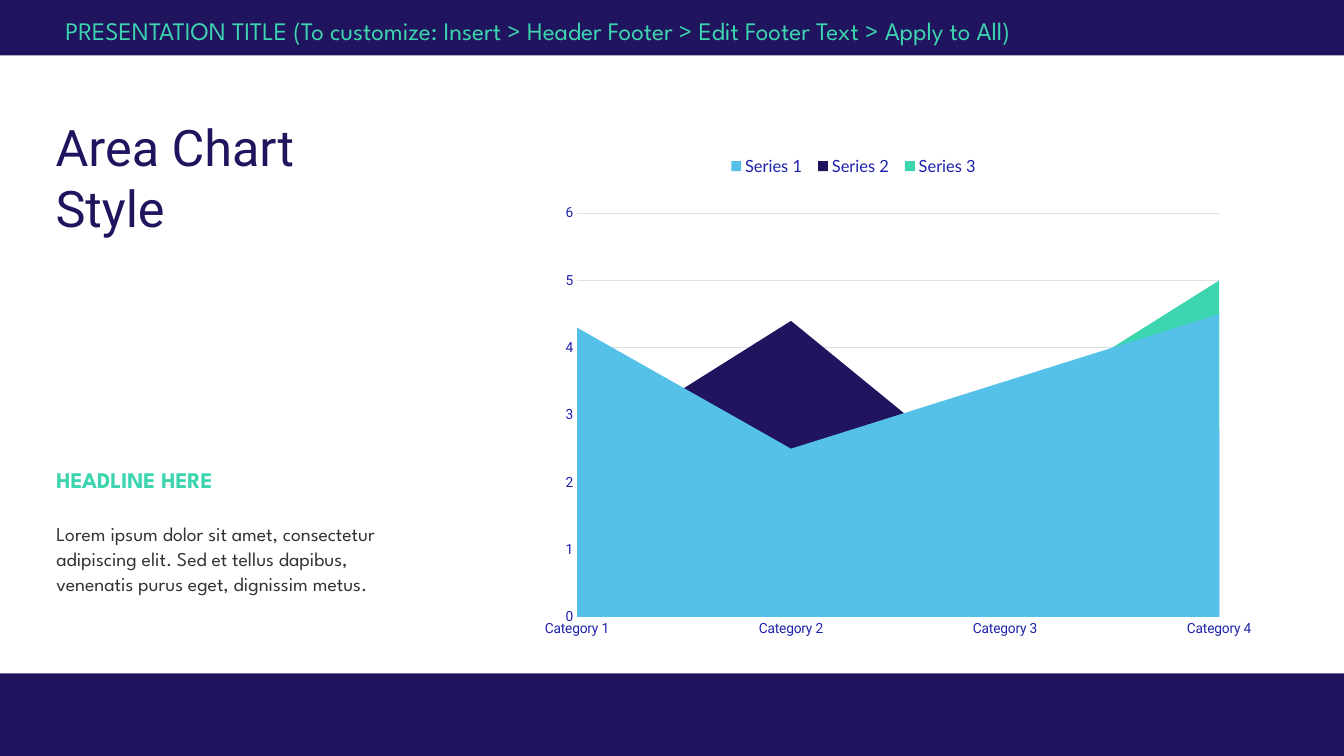
import pptx
import pptx.chart.data
import pptx.dml.color
import pptx.enum.chart
import pptx.enum.shapes
import pptx.enum.text
import pptx.oxml
import pptx.oxml.ns
import pptx.util

Cm, Pt = pptx.util.Cm, pptx.util.Pt
RGBColor = pptx.dml.color.RGBColor
ALIGN = pptx.enum.text.PP_ALIGN
ANCHOR = pptx.enum.text.MSO_ANCHOR

# Content
TITLE = "Area Chart\vStyle"
HEADER = ("PRESENTATION TITLE (To customize: Insert > Header Footer > "
          "Edit Footer Text > Apply to All)")
HEADLINE = "HEADLINE HERE"
BODY = ("Lorem ipsum dolor sit amet, consectetur adipiscing elit. "
        "Sed et tellus dapibus, venenatis purus eget, dignissim metus.")
CATEGORIES = ["Category 1", "Category 2", "Category 3", "Category 4"]

NAVY = RGBColor(0x21, 0x14, 0x5F)
INK = RGBColor(0x20, 0x14, 0x5E)
BLUE = RGBColor(0x1E, 0x22, 0xAA)
SKY = RGBColor(0x55, 0xC1, 0xE9)
MINT = RGBColor(0x3C, 0xD5, 0xAF)
GREY = RGBColor(0x33, 0x33, 0x33)
RULE = RGBColor(0xE0, 0xE0, 0xE0)

SERIES = [
    ("Series 1", (4.3, 2.5, 3.5, 4.5), SKY),
    ("Series 2", (2.4, 4.4, 1.8, 2.8), INK),
    ("Series 3", (2, 2, 3, 5), MINT),
]

# Geometry in cm; chart layouts are fractions of the chart: x, y, w, h
WIDTH, HEIGHT = 33.87, 19.05
TOP_BAND, BOTTOM_BAND = 1.4, 2.08
PLOT_AREA = (0.054, 0.136, 0.919, 0.694)
LEGEND_AREA = (0.26, 0.03, 0.38, 0.05)


def style_font(font, size, color, name, bold=False):
    font.size, font.name, font.bold = Pt(size), name, bold
    font.color.rgb = color


def write(shape, text, *, size, color, font="League Spartan", bold=False,
          insets=(0, 0.13), anchor=ANCHOR.TOP, wrap=True, spacing=None):
    frame = shape.text_frame
    frame.word_wrap, frame.vertical_anchor = wrap, anchor
    frame.margin_left = frame.margin_right = Cm(insets[0])
    frame.margin_top = frame.margin_bottom = Cm(insets[1])
    paragraph = frame.paragraphs[0]
    paragraph.text = text
    paragraph.alignment = ALIGN.LEFT
    if spacing:
        paragraph.line_spacing = Pt(spacing)
    for run in paragraph.runs:
        style_font(run.font, size, color, font, bold)


def manual_layout(parent, area, inner=False):
    """Fix the place of a chart part."""
    target = '<c:layoutTarget val="inner"/>' if inner else ""
    modes = '<c:xMode val="edge"/><c:yMode val="edge"/>'
    sides = "".join(f'<c:{k} val="{v}"/>' for k, v in zip("xywh", area))
    layout = pptx.oxml.parse_xml(
        f'<c:layout {pptx.oxml.ns.nsdecls("c")}><c:manualLayout>'
        f'{target}{modes}{sides}</c:manualLayout></c:layout>')
    for old in parent.findall(pptx.oxml.ns.qn("c:layout")):
        parent.remove(old)
    position = parent.find(pptx.oxml.ns.qn("c:legendPos"))
    if position is None:
        parent.insert(0, layout)
    else:
        position.addnext(layout)


deck = pptx.Presentation()
deck.slide_width, deck.slide_height = Cm(WIDTH), Cm(HEIGHT)
slide = deck.slides.add_slide(deck.slide_layouts[5])
shapes = slide.shapes

# Bands
for top, height in ((0, TOP_BAND), (HEIGHT - BOTTOM_BAND, BOTTOM_BAND)):
    band = shapes.add_shape(pptx.enum.shapes.MSO_SHAPE.RECTANGLE,
                            0, Cm(top), Cm(WIDTH), Cm(height))
    band.shadow.inherit = False
    band.fill.solid()
    band.fill.fore_color.rgb = NAVY
    band.line.fill.background()

# Texts
title = shapes.title
title.left, title.top, title.width, title.height = (
    Cm(1.4), Cm(1.98), Cm(24.33), Cm(4.95))
write(title, TITLE, size=36, color=INK, font="Roboto", insets=(0, 0),
      anchor=ANCHOR.MIDDLE)

header = shapes.add_textbox(Cm(1.4), Cm(0.25), Cm(29.36), Cm(1.02))
write(header, HEADER, size=18, color=MINT, insets=(0.25, 0.13))

headline = shapes.add_textbox(Cm(1.42), Cm(11.61), Cm(4.17), Cm(0.94))
write(headline, HEADLINE, size=16, color=MINT, bold=True, wrap=False)

body = shapes.add_textbox(Cm(1.42), Cm(12.98), Cm(8.84), Cm(2.77))
write(body, BODY, size=14, color=GREY, spacing=18)

# Area chart
area_data = pptx.chart.data.CategoryChartData()
area_data.categories = CATEGORIES
for name, values, _ in SERIES:
    area_data.add_series(name, values)
chart = shapes.add_chart(
    pptx.enum.chart.XL_CHART_TYPE.AREA,
    Cm(13.59), Cm(3.38), Cm(17.98), Cm(14.66), area_data).chart
chart.has_title = False
style_font(chart.font, 12, GREY, "League Spartan")
for series, (_, _, color) in zip(chart.plots[0].series, SERIES):
    series.format.fill.solid()
    series.format.fill.fore_color.rgb = color
    series.format.line.fill.background()

# Axes
category_axis, value_axis = chart.category_axis, chart.value_axis
for axis in (category_axis, value_axis):
    axis.major_tick_mark = axis.minor_tick_mark = pptx.enum.chart.XL_TICK_MARK.NONE
    style_font(axis.tick_labels.font, 10, BLUE, "Roboto")
category_axis.has_major_gridlines = False
value_axis.has_major_gridlines = True
value_axis.minimum_scale, value_axis.maximum_scale = 0, 6
value_axis.major_unit = 1
value_axis.format.line.fill.background()
for line in (category_axis.format.line, value_axis.major_gridlines.format.line):
    line.color.rgb = RULE
    line.width = Pt(0.75)
for crossing in chart.element.iter(pptx.oxml.ns.qn("c:crossBetween")):
    crossing.set("val", "midCat")

# Legend and plot placement
chart.has_legend = True
legend = chart.legend
legend.position = pptx.enum.chart.XL_LEGEND_POSITION.BOTTOM
legend.include_in_layout = False
style_font(legend.font, 12, BLUE, "Lato")
plot_area = next(chart.element.iter(pptx.oxml.ns.qn("c:plotArea")))
legend_part = next(chart.element.iter(pptx.oxml.ns.qn("c:legend")))
manual_layout(plot_area, PLOT_AREA, inner=True)
manual_layout(legend_part, LEGEND_AREA)

deck.save("out.pptx")
